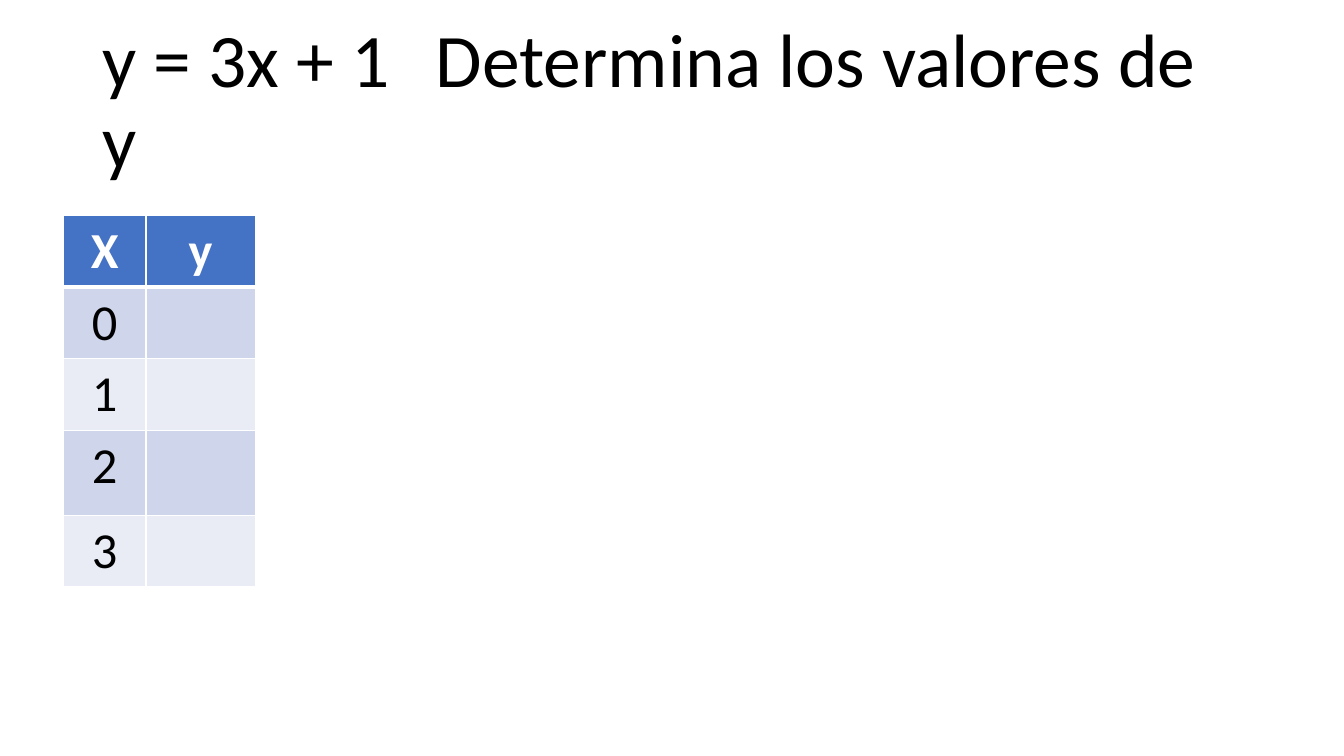
"""Builds a slide asking for the values of y in a linear equation."""
from typing import NamedTuple

from lxml import etree
from pptx import Presentation, util as u
from pptx.dml.color import RGBColor
from pptx.enum import text
from pptx.oxml.ns import qn

FONT = "Calibri"
COLORS = {"ink": "000000", "white": "FFFFFF", "header": "4472C4",
          "odd": "CFD5EA", "even": "E9EBF5"}


class Row(NamedTuple):
    labels: tuple[str, ...]
    height: float
    fill: str
    color: str = "ink"
    bold: bool = False
    rule: float = 1


ROWS = [
    Row(("X", "y"), 1.8, "header", "white", True, 3),
    Row(("0", ""), 1.8, "odd"),
    Row(("1", ""), 1.8, "even"),
    Row(("2", ""), 2.14, "odd"),
    Row(("3", ""), 1.8, "even"),
]
COLUMN_WIDTHS = (2.08, 2.75)


def set_font(p, size: float, color: str, bold: bool = False) -> None:
    p.font.name, p.font.size, p.font.bold = FONT, u.Pt(size), bold
    p.font.color.rgb = RGBColor.from_string(COLORS[color])


def add_border(cell, side: str, width: float) -> None:
    ln = etree.SubElement(cell._tc.get_or_add_tcPr(), qn(f"a:ln{side}"),
                          w=str(u.Pt(width)))
    fill = etree.SubElement(ln, qn("a:solidFill"))
    etree.SubElement(fill, qn("a:srgbClr"), val=COLORS["white"])


def add_title(s) -> None:
    tf = s.shapes.add_textbox(u.Cm(2.33), u.Cm(1.01), u.Cm(29.21), u.Cm(3.2)).text_frame
    tf.word_wrap = True
    tf.vertical_anchor = text.MSO_ANCHOR.MIDDLE
    p = tf.paragraphs[0]
    p.text = "y = 3x + 1\tDetermina los valores de y"
    p.line_spacing = 0.9
    tabs = etree.SubElement(p._p.get_or_add_pPr(), qn("a:tabLst"))
    etree.SubElement(tabs, qn("a:tab"), pos=str(u.Cm(8.4)), algn="l")
    set_font(p, 54, "ink")


def fill_cell(cell, row: Row, label: str, top_rule: float) -> None:
    for side, width in zip("LRTB", (1, 1, top_rule, row.rule)):
        add_border(cell, side, width)
    cell.fill.solid()
    cell.fill.fore_color.rgb = RGBColor.from_string(COLORS[row.fill])
    if label:
        p = cell.text_frame.paragraphs[0]
        p.text = label
        p.alignment = text.PP_ALIGN.CENTER
        set_font(p, 36, row.color, row.bold)


def add_values_table(s) -> None:
    table = s.shapes.add_table(
        len(ROWS), len(COLUMN_WIDTHS), u.Cm(1.6), u.Cm(5.44),
        u.Cm(sum(COLUMN_WIDTHS)), u.Cm(sum(row.height for row in ROWS))).table
    for column, width in zip(table.columns, COLUMN_WIDTHS):
        column.width = u.Cm(width)
    top_rule = 1
    for i, row in enumerate(ROWS):
        table.rows[i].height = u.Cm(row.height)
        for j, label in enumerate(row.labels):
            fill_cell(table.cell(i, j), row, label, top_rule)
        top_rule = row.rule


def main() -> None:
    prs = Presentation()
    prs.slide_width, prs.slide_height = u.Cm(33.87), u.Cm(19.05)
    s = prs.slides.add_slide(prs.slide_layouts[6])
    add_title(s)
    add_values_table(s)
    prs.save("out.pptx")


if __name__ == "__main__":
    main()
